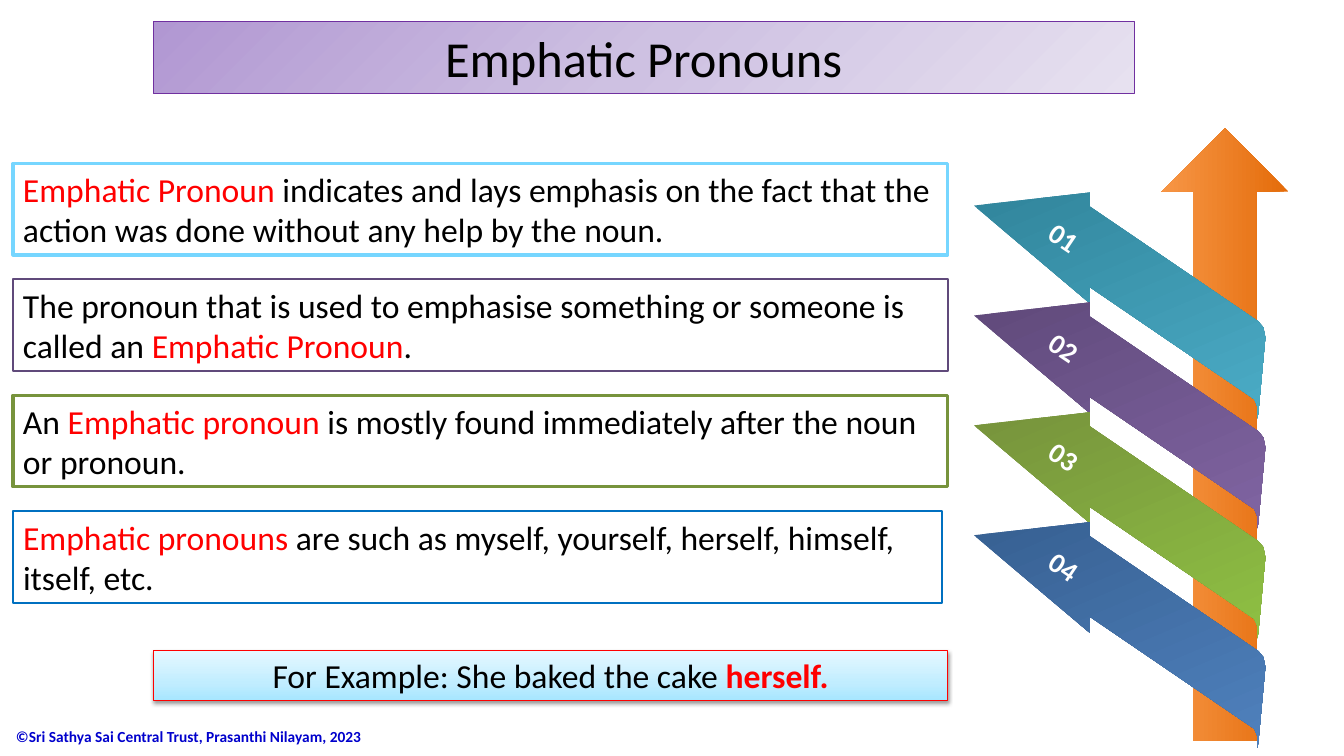
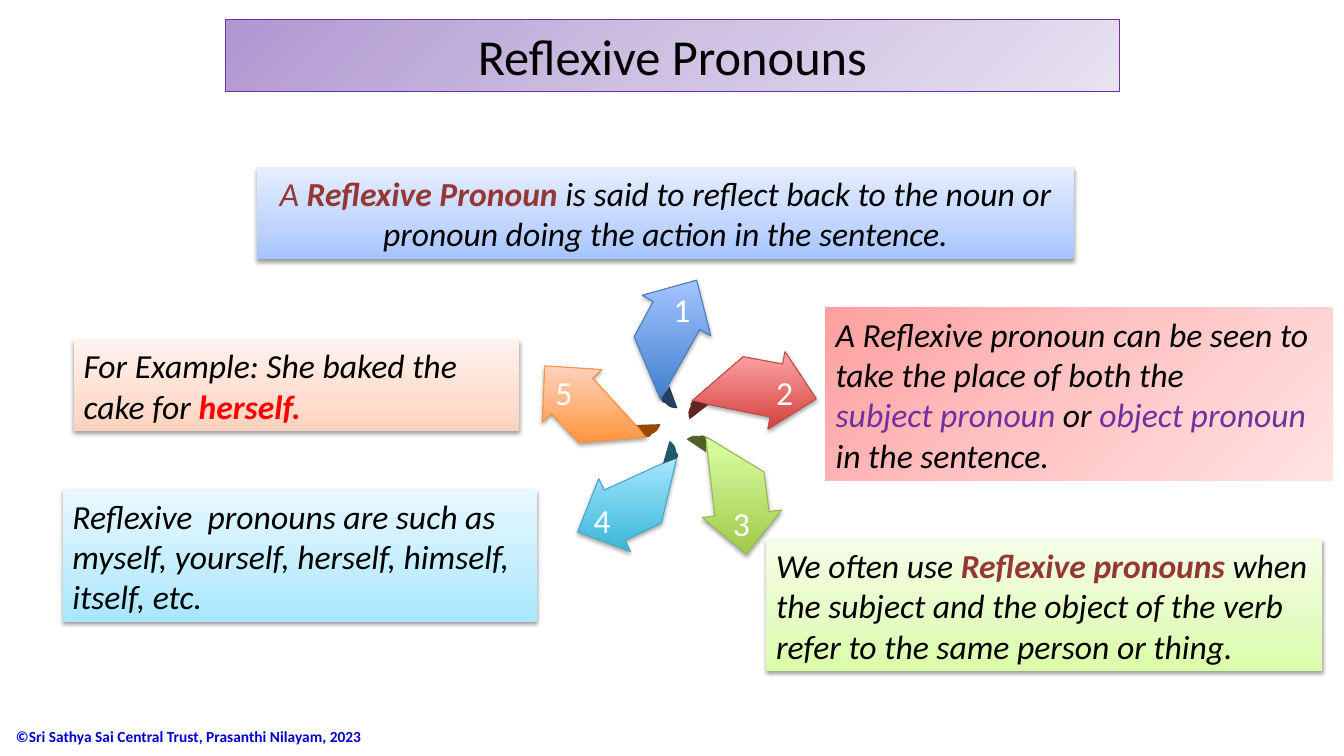
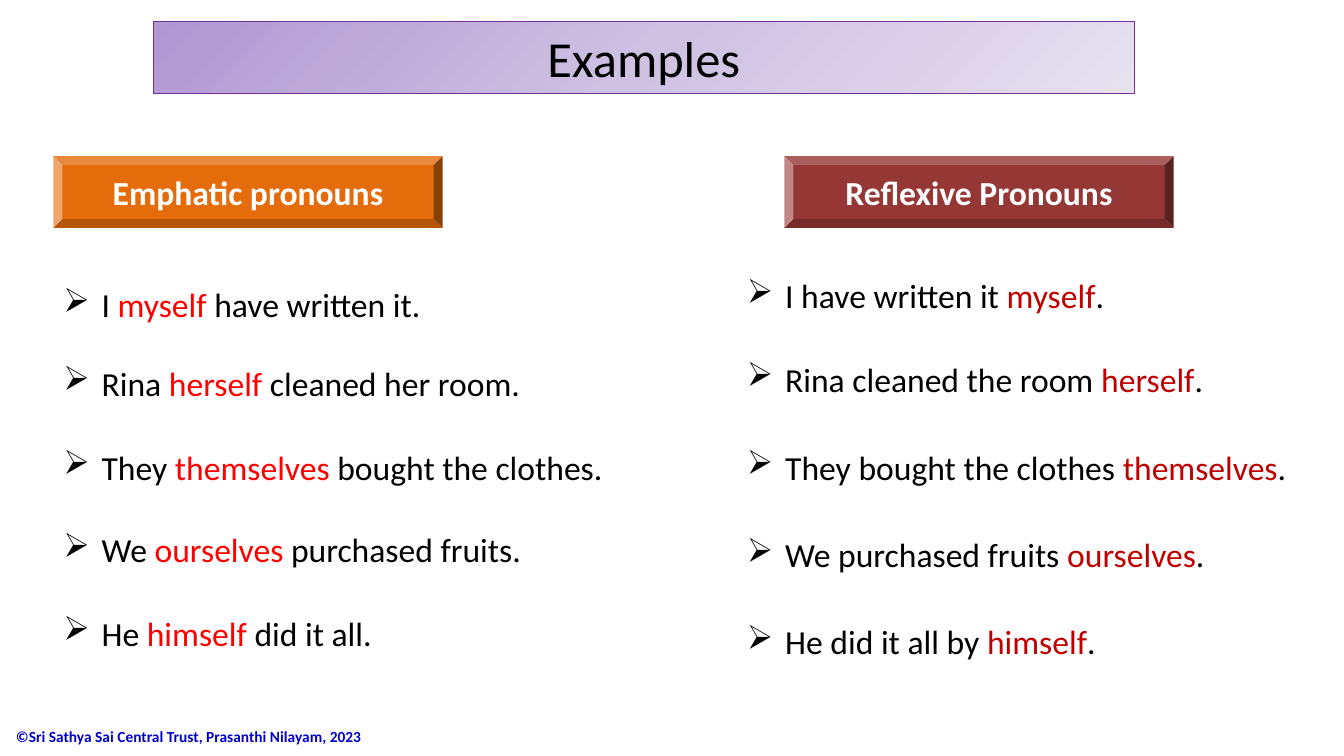
"""Build three slides on emphatic and reflexive pronouns."""
from math import cos, radians, sin

from pptx import Presentation, oxml
from pptx.dml.color import RGBColor
from pptx.enum import shapes, text
from pptx.oxml import ns
from pptx.util import Inches, Pt

FORM = shapes.MSO_SHAPE
ALIGN = text.PP_ALIGN
SKY = [(0, "A7E6FF"), (35, "C1EDFF"), (100, "E7F8FF")]


def paint(shape, fill=None, turn=None, line=None, width=0.75, shade=0):
    """Fill with a colour or with stops (from the corner if turn is None), then line and shadow."""
    if fill is None:
        shape.fill.background()
    elif isinstance(fill, str):
        shape.fill.solid()
        shape.fill.fore_color.rgb = RGBColor.from_string(fill)
    else:
        shape.fill.gradient()
        grad = shape.element.spPr.find(ns.qn("a:gradFill"))
        for old in list(grad):
            grad.remove(old)
        stops = "".join(f'<a:gs pos="{pos * 1000}"><a:srgbClr val="{tint}"/></a:gs>'
                        for pos, tint in fill)
        grad.append(oxml.parse_xml(f'<a:gsLst {ns.nsdecls("a")}>{stops}</a:gsLst>'))
        if turn is None:
            flow = (f'<a:path {ns.nsdecls("a")} path="circle">'
                    '<a:fillToRect r="100000" b="100000"/></a:path>')
        else:
            flow = f'<a:lin {ns.nsdecls("a")} ang="{turn * 60000}" scaled="0"/>'
        grad.append(oxml.parse_xml(flow))
    if line:
        shape.line.color.rgb = RGBColor.from_string(line)
        shape.line.width = Pt(width)
    else:
        shape.line.fill.background()
    shape.shadow.inherit = False
    if shade:
        shape.element.spPr.find(ns.qn("a:effectLst")).append(oxml.parse_xml(
            f'<a:outerShdw {ns.nsdecls("a")} blurRad="{Pt(3.1)}" dist="{Pt(1.6)}" dir="5400000" '
            f'rotWithShape="0"><a:srgbClr val="000000"><a:alpha val="{shade * 1000}"/>'
            '</a:srgbClr></a:outerShdw>'))


def write(shape, words, size=24, tint="000000", accent="FF0000", align=ALIGN.LEFT,
          bold=False, heavy=False, slant=False, bullet=None):
    """Write one paragraph a line; pieces between bars take the accent."""
    frame = shape.text_frame
    frame.word_wrap = True
    frame.vertical_anchor = text.MSO_ANCHOR.MIDDLE
    for row, line in enumerate(words.split("\n")):
        para = frame.add_paragraph() if row else frame.paragraphs[0]
        para.alignment = align
        if bullet:
            props = para._p.get_or_add_pPr()
            props.set("marL", str(Inches(0.38)))
            props.set("indent", str(-Inches(0.38)))
            props.append(oxml.parse_xml(f'<a:buChar {ns.nsdecls("a")} char="{bullet}"/>'))
        font = para.font
        font.name, font.size, font.bold, font.italic = "Calibri", Pt(size), bold, slant
        font.color.rgb = RGBColor.from_string(tint)
        for spot, piece in enumerate(line.split("|")):
            if piece:
                run = para.add_run()
                run.text = piece
                if spot % 2:
                    run.font.color.rgb = RGBColor.from_string(accent)
                    if heavy:
                        run.font.bold = True


deck = Presentation()
deck.slide_width, deck.slide_height = Inches(13.33), Inches(7.5)
plain = deck.slide_layouts[5]

pages = []
for name, box in [("Emphatic Pronouns", (1.52, 0.21, 9.73, 0.72)),
                  ("Reflexive Pronouns", (2.24, 0.19, 8.86, 0.72)),
                  ("Examples", (1.52, 0.21, 9.73, 0.72))]:
    page = deck.slides.add_slide(plain)
    title = page.shapes.title
    title.left, title.top, title.width, title.height = map(Inches, box)
    paint(title, [(0, "B197D2"), (50, "CEC1E2"), (100, "E7E1F0")], line="7030A0")
    write(title, name, size=36, align=ALIGN.CENTER)
    pages.append(page.shapes)
first, second, third = pages

foot = first.add_textbox(*map(Inches, (0.06, 7.1, 3.81, 0.41)))
write(foot, "©Sri Sathya Sai Central Trust, Prasanthi Nilayam, 2023", size=11, tint="0000CC", bold=True)
plain.shapes.element.append(foot.element)

pole = first.add_shape(FORM.UP_ARROW, *map(Inches, (11.52, 1.27, 1.26, 6.08)))
paint(pole, [(0, "E46C0A"), (100, "F79646")], 180)

ribbon = [(10.81, 1.91), (10.81, 2.05), (12.48, 3.19), (12.53, 3.25), (12.55, 3.35),
          (12.48, 4.1), (12.47, 4.15), (12.47, 4.03), (12.44, 3.96), (10.81, 2.85),
          (10.81, 3.01), (9.66, 2.04)]
for rank, (dark, light) in enumerate([("31859C", "4BACC6"), ("604A7B", "8064A2"),
                                      ("77933C", "8EC043"), ("376092", "4F81BD")]):
    drop = 1.09 * rank
    dots = [(Inches(x), Inches(y + drop)) for x, y in ribbon]
    pen = first.build_freeform(*dots[0])
    pen.add_line_segments(dots[1:])
    paint(pen.convert_to_shape(), [(0, dark), (100, light)], 67)
    label = first.add_textbox(*map(Inches, (10.31, 2.15 + drop, 0.55, 0.44)))
    label.rotation = 34
    write(label, f"0{rank + 1}", size=20, tint="FFFFFF", bold=True)

facts = [
    ("76D6FF", 2.25, 9.27, "|Emphatic Pronoun |indicates and lays emphasis on the fact that the "
     "action was done without any help by the noun."),
    ("604A7B", 1.5, 9.27, "The pronoun that is used to emphasise something or someone is "
     "called an |Emphatic Pronoun|."),
    ("77933C", 2.25, 9.27, "An |Emphatic pronoun |is mostly found immediately after the noun or pronoun."),
    ("0070C0", 1.5, 9.21, "|Emphatic pronouns |are such as myself, yourself, herself, himself, "
     "itself, etc."),
]
for rank, (edge, width, span, words) in enumerate(facts):
    card = first.add_shape(FORM.RECTANGLE, *map(Inches, (0.13, 1.62 + 1.15 * rank, span, 0.91)))
    paint(card, line=edge, width=width)
    write(card, words)

case = first.add_shape(FORM.RECTANGLE, *map(Inches, (1.52, 6.45, 7.88, 0.5)))
paint(case, SKY, 270, line="FF0000", shade=38)
write(case, "For Example: She baked the cake |herself.|", align=ALIGN.CENTER, heavy=True)

arrow = [(-0.12, 0.59), (0.27, -0.1), (0.38, -0.04), (0.24, -0.59), (-0.3, -0.44),
         (-0.19, -0.38), (-0.38, -0.03)]
fold = [(0, -0.11), (0.08, 0.11), (0.05, 0.11), (0.01, 0.1), (-0.02, 0.08), (-0.04, 0.06),
        (-0.07, 0.05), (-0.08, 0.03), (-0.08, 0.01)]
wheel = [
    ((6.67, 3.37), (6.64, 3.94), (6.58, 2.82), "3F80CE", "A4C4FF", "4B7EBC", "254061"),
    ((7.46, 3.91), (6.92, 4.05), (7.6, 3.64), "D1403C", "FFA6A5", "BF4C48", "632523"),
    ((7.25, 4.88), (6.94, 4.4), (7.17, 4.94), "A0CA4A", "DAFFA5", "98B955", "4F6228"),
    ((6.27, 4.94), (6.64, 4.51), (5.79, 4.91), "39B7D8", "A7E6FF", "46AAC5", "215968"),
    ((5.89, 4.04), (6.42, 4.25), (5.41, 3.64), "FF953E", "FFD2BD", "F69240", "984807"),
]
for rank, (hub, root, spot, low, high, edge, deep) in enumerate(wheel):
    c, s = cos(radians(72 * rank)), sin(radians(72 * rank))
    for shape, (left, top), look in [
            (arrow, hub, dict(fill=[(0, low), (100, high)], turn=270, line=edge, shade=35)),
            (fold, root, dict(fill=deep))]:
        dots = [(Inches(left + x * c - y * s), Inches(top + x * s + y * c)) for x, y in shape]
        pen = second.build_freeform(*dots[0])
        pen.add_line_segments(dots[1:])
        paint(pen.convert_to_shape(), **look)
    label = second.add_textbox(*map(Inches, (*spot, 0.38, 0.5)))
    write(label, str(rank + 1), tint="FFFFFF")

cards = [
    ((2.55, 1.66, 8.1, 0.91), [(0, "A4C4FF"), (35, "BFD4FF"), (100, "E6EEFF")], 270, 38,
     "|A|| Reflexive Pronoun |is said to reflect back to the noun or pronoun doing the action "
     "in the sentence.", dict(accent="953735", heavy=True, align=ALIGN.CENTER)),
    ((8.19, 3.05, 5.03, 1.72), [(0, "FFA0A0"), (50, "FFC5C5"), (100, "FFE3E3")], None, 0,
     "A Reflexive pronoun can be seen to take the place of both the\n"
     "|subject pronoun |or |object pronoun |in the sentence.", dict(accent="7030A0")),
    ((0.62, 4.86, 4.71, 1.31), SKY, 270, 38,
     "Reflexive  pronouns are such as myself, yourself, herself, himself,\nitself, etc.", {}),
    ((0.73, 3.37, 4.42, 0.91), [(0, "FFD2BD"), (35, "FFDED0"), (100, "FFF2ED")], 270, 38,
     "For Example: She baked the cake for |herself.|", dict(heavy=True)),
    ((7.6, 5.35, 5.51, 1.31), [(0, "DAFDA7"), (35, "E4FCC2"), (100, "F5FFE7")], 270, 38,
     "We often use |Reflexive pronouns |when the subject and the object of the verb refer to "
     "the same person or thing.", dict(accent="953735", heavy=True)),
]
for rank, (box, stops, turn, shade, words, style) in enumerate(cards):
    card = second.add_shape(FORM.RECTANGLE, *map(Inches, box))
    paint(card, stops, turn, shade=shade)
    write(card, words, slant=True, **style)
    if rank == 0:
        card.text_frame.paragraphs[0].runs[0].font.bold = False

lists = [
    ("Emphatic pronouns", 0.53, "E46C0A", 0.53, "FF0000", [
        (2.77, "I |myself| have written it."),
        (3.55, "Rina |herself| cleaned her room."),
        (4.38, "They |themselves| bought the clothes."),
        (5.2, "We |ourselves| purchased fruits."),
        (6.03, "He |himself| did it all.")]),
    ("Reflexive Pronouns", 7.78, "953735", 7.31, "C00000", [
        (2.68, "I have written it |myself|."),
        (3.51, "Rina cleaned the room |herself|."),
        (4.38, "They bought the clothes |themselves|."),
        (5.25, "We purchased fruits |ourselves|."),
        (6.11, "He did it all by |himself|.")]),
]
for name, left, tint, edge, accent, lines in lists:
    head = third.add_shape(FORM.BEVEL, *map(Inches, (left, 1.55, 3.86, 0.71)))
    paint(head, tint)
    write(head, name, tint="FFFFFF", align=ALIGN.CENTER, bold=True)
    for top, words in lines:
        item = third.add_textbox(*map(Inches, (edge, top, 5.9, 0.5)))
        write(item, words, accent=accent, bullet="➢")

deck.save("out.pptx")
